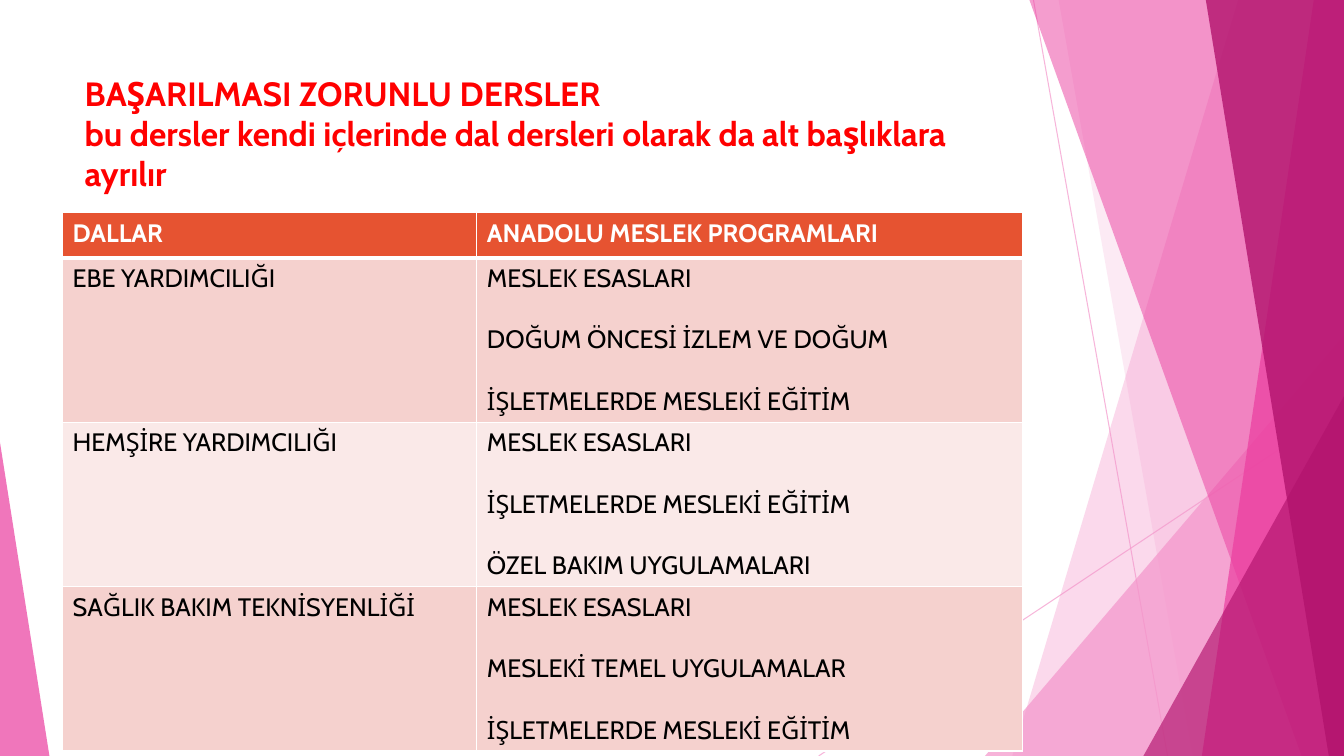
from dataclasses import dataclass

from lxml.etree import SubElement
from pptx import Presentation
from pptx.dml.color import RGBColor
from pptx.enum.shapes import MSO_CONNECTOR as Conn, MSO_SHAPE as Shape
from pptx.enum.text import MSO_ANCHOR as Anchor, MSO_AUTO_SIZE as AutoSize, PP_ALIGN as Align
from pptx.oxml.ns import qn
from pptx.util import Inches, Pt


@dataclass(frozen=True)
class Theme:
    font: str = "Cabin"
    title_size: int = 24
    cell_size: int = 18
    course_gap: int = 22
    title: str = "FF0000"
    text: str = "000000"
    white: str = "FFFFFF"
    header: str = "E65331"
    bands: tuple = ("F5D1CE", "FAE9E8")
    light: str = "F496CB"
    pink: str = "EB3D9F"
    dark: str = "B2136D"


T = Theme()
W, H = 13.33, 7.5

TITLE = ("BAŞARILMASI ZORUNLU DERSLER\v"
         "bu dersler kendi içlerinde dal dersleri olarak da alt başlıklara ayrılır")
HEADINGS = ("DALLAR", "ANADOLU MESLEK PROGRAMLARI")
BRANCHES = (
    ("EBE YARDIMCILIĞI",
     ("MESLEK ESASLARI", "DOĞUM ÖNCESİ İZLEM VE DOĞUM", "İŞLETMELERDE MESLEKİ EĞİTİM")),
    ("HEMŞİRE YARDIMCILIĞI",
     ("MESLEK ESASLARI", "İŞLETMELERDE MESLEKİ EĞİTİM", "ÖZEL BAKIM UYGULAMALARI")),
    ("SAĞLIK BAKIM TEKNİSYENLİĞİ",
     ("MESLEK ESASLARI", "MESLEKİ TEMEL UYGULAMALAR", "İŞLETMELERDE MESLEKİ EĞİTİM")),
)


def rgb(color):
    return RGBColor.from_string(color)


def paint(fill, color, opacity):
    """Solid fill with opacity in percent."""
    fill.solid()
    fill.fore_color.rgb = rgb(color)
    clr = next(fill._xPr.iter(qn("a:srgbClr")))
    SubElement(clr, qn("a:alpha"), val=str(opacity * 1000))


def style(p, size, color, bold):
    p.alignment = Align.LEFT
    for r in p.runs:
        r.font.name, r.font.size, r.font.bold = T.font, Pt(size), bold
        r.font.color.rgb = rgb(color)


# Decoration
def add_ray(slide, start, end):
    line = slide.shapes.add_connector(Conn.STRAIGHT, *map(Inches, start + end))
    line.line.width = Pt(0.75)
    paint(line.line.fill, T.light, 70)
    SubElement(line._element.spPr, qn("a:effectLst"))


def finish(sp, color, opacity):
    sp.shadow.inherit = False
    sp.line.fill.background()
    paint(sp.fill, color, opacity)


def add_ribbon(slide, top_x, bottom_x, color, opacity):
    """Full-height band from a slanted left side to the right slide edge."""
    corners = [(W, 0), (W, H), (bottom_x, H)]
    fb = slide.shapes.build_freeform(Inches(top_x), 0, scale=1)
    fb.add_line_segments([(Inches(x), Inches(y)) for x, y in corners], close=True)
    finish(fb.convert_to_shape(), color, opacity)


def add_corner(slide, left, top, width, apex, color, opacity):
    """Triangle standing on the bottom slide edge."""
    sp = slide.shapes.add_shape(Shape.ISOSCELES_TRIANGLE, Inches(left), Inches(top),
                                Inches(width), Inches(H - top))
    sp.adjustments[0] = apex
    finish(sp, color, opacity)


def add_decoration(slide):
    add_ray(slide, (10.25, 0), (11.58, H))
    add_ray(slide, (W, 4.03), (8.12, H))
    add_ribbon(slide, 12.28, 10.04, T.light, 36)
    add_ribbon(slide, 10.5, 11.83, T.light, 20)
    add_corner(slide, 9.77, 3.33, W - 9.77, 1, T.light, 72)
    add_ribbon(slide, 10.21, 12.91, T.pink, 50)
    add_ribbon(slide, 13.03, 11.92, T.pink, 70)
    add_ribbon(slide, 11.96, 13.18, T.dark, 80)
    add_corner(slide, 11.34, 3.93, W - 11.34, 1, T.dark, 66)
    add_corner(slide, 0, 4.39, 0.49, 0, T.pink, 70)


# Title
def add_title(slide, left, top, width, height):
    sp = slide.shapes.title
    sp.left, sp.top, sp.width, sp.height = map(Inches, (left, top, width, height))
    tf = sp.text_frame
    tf.text = TITLE
    tf.word_wrap, tf.auto_size = True, AutoSize.NONE
    tf.vertical_anchor = Anchor.TOP
    style(tf.paragraphs[0], T.title_size, T.title, True)
    sp._element.getparent().append(sp._element)


# Table
def add_borders(cell, bottom):
    tcPr = cell._tc.get_or_add_tcPr()
    for i, (side, pt) in enumerate((("L", 1), ("R", 1), ("T", 1), ("B", bottom))):
        ln = SubElement(tcPr, qn(f"a:ln{side}"), w=str(Pt(pt)))
        SubElement(SubElement(ln, qn("a:solidFill")), qn("a:srgbClr"), val=T.white)
        tcPr.insert(i, ln)


def fill_cell(cell, lines, fill, color, bold=False, bottom=1):
    cell.fill.solid()
    cell.fill.fore_color.rgb = rgb(fill)
    add_borders(cell, bottom)
    tf = cell.text_frame
    tf.text = "\n".join(lines)
    for i, p in enumerate(tf.paragraphs):
        p.space_before = Pt(T.course_gap if i else 0)
        style(p, T.cell_size, color, bold)


def add_course_table(slide, left, top, col_widths, header_h, row_h):
    n = len(BRANCHES)
    box = (left, top, sum(col_widths), header_h + n * row_h)
    table = slide.shapes.add_table(n + 1, len(HEADINGS), *map(Inches, box)).table
    for col, width in zip(table.columns, col_widths):
        col.width = Inches(width)
    for i, row in enumerate(table.rows):
        row.height = Inches(row_h if i else header_h)
    for c, heading in enumerate(HEADINGS):
        fill_cell(table.cell(0, c), [heading], T.header, T.white, bold=True, bottom=3)
    for i, (branch, courses) in enumerate(BRANCHES):
        band = T.bands[i % 2]
        fill_cell(table.cell(i + 1, 0), [branch], band, T.text)
        fill_cell(table.cell(i + 1, 1), courses, band, T.text)


def main():
    prs = Presentation()
    prs.slide_width, prs.slide_height = Inches(W), Inches(H)
    slide = prs.slides.add_slide(prs.slide_layouts[5])
    add_decoration(slide)
    add_title(slide, 0.74, 0.67, 9.4, 1.44)
    add_course_table(slide, 0.62, 2.11, (4.11, 5.41), 0.45, 1.63)
    prs.save("out.pptx")


if __name__ == "__main__":
    main()
